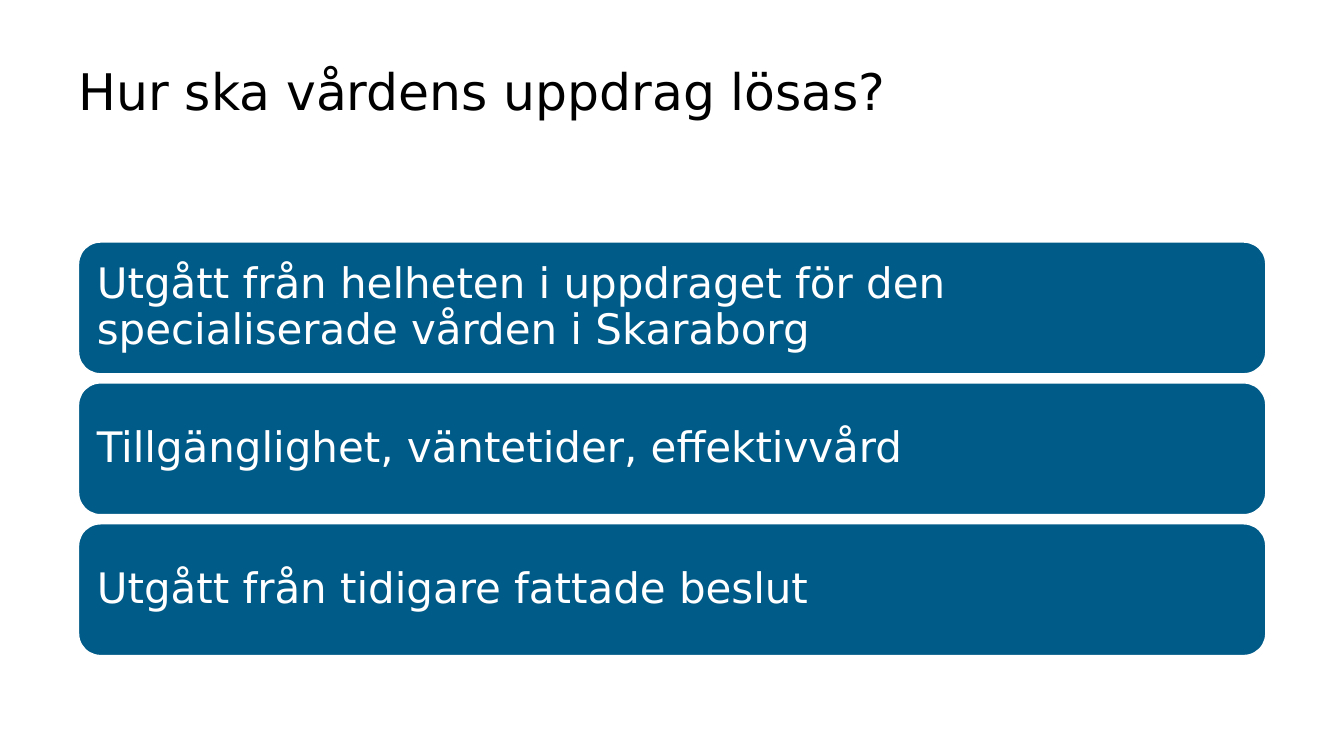
from pptx import Presentation
from pptx.dml.color import RGBColor
from pptx.enum.shapes import MSO_SHAPE
from pptx.enum.text import MSO_ANCHOR, PP_ALIGN
from pptx.util import Cm, Pt

LEFT, WIDTH = 1.98, 29.92
BAR_TOP, BAR_HEIGHT, BAR_PITCH = 6.1, 3.32, 3.55
STATEMENTS = [
    "Utgått från helheten i uppdraget för den specialiserade vården i Skaraborg",
    "Tillgänglighet, väntetider, effektivvård",
    "Utgått från tidigare fattade beslut",
]


def color(value):
    return RGBColor.from_string(value)


class SlideBuilder:
    font = "DejaVu Sans"
    black = "000000"
    white = "FFFFFF"
    blue = "005B89"

    def __init__(self, page):
        self.page = page

    def add_text(self, shape, text, size, ink, anchor, inset, spacing):
        frame = shape.text_frame
        frame.word_wrap = True
        frame.vertical_anchor = anchor
        frame.margin_left = frame.margin_right = Cm(inset)
        frame.margin_top = frame.margin_bottom = Cm(inset)
        para = frame.paragraphs[0]
        para.alignment = PP_ALIGN.LEFT
        para.line_spacing = spacing
        span = para.add_run()
        span.text = text
        span.font.name = self.font
        span.font.size = Pt(size)
        span.font.color.rgb = color(ink)

    def title(self, text, top, height):
        box = self.page.shapes.add_textbox(Cm(LEFT), Cm(top), Cm(WIDTH), Cm(height))
        self.add_text(box, text, 36, self.black, MSO_ANCHOR.TOP, 0, 1.0)

    def bar(self, text, top):
        bar = self.page.shapes.add_shape(
            MSO_SHAPE.ROUNDED_RECTANGLE, Cm(LEFT), Cm(top), Cm(WIDTH), Cm(BAR_HEIGHT)
        )
        bar.shadow.inherit = False
        bar.fill.solid()
        bar.fill.fore_color.rgb = color(self.blue)
        bar.line.color.rgb = color(self.white)
        bar.line.width = Pt(1)
        self.add_text(bar, text, 30, self.white, MSO_ANCHOR.MIDDLE, 0.3, 0.9)


def main():
    deck = Presentation()
    deck.slide_width, deck.slide_height = Cm(33.87), Cm(19.05)
    builder = SlideBuilder(deck.slides.add_slide(deck.slide_layouts[6]))
    builder.title("Hur ska vårdens uppdrag lösas?", 1.52, 3.84)
    for index, statement in enumerate(STATEMENTS):
        builder.bar(statement, BAR_TOP + index * BAR_PITCH)
    deck.save("out.pptx")


if __name__ == "__main__":
    main()
